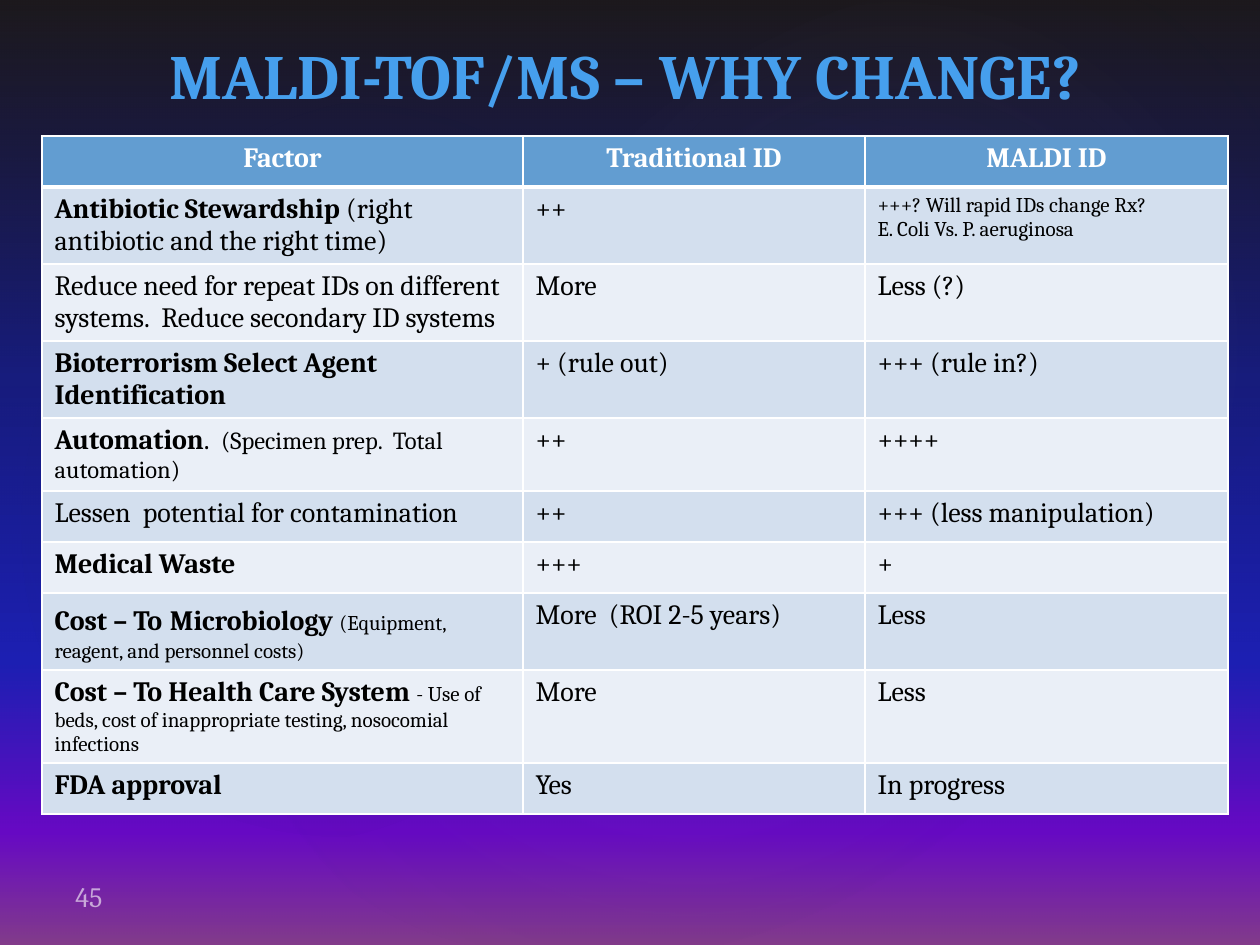
from lxml import etree
from pptx import Presentation
from pptx.dml.color import RGBColor
from pptx.enum.shapes import MSO_SHAPE as Shape
from pptx.enum.text import MSO_ANCHOR as Anchor, MSO_AUTO_SIZE as AutoSize, PP_ALIGN as Align
from pptx.oxml import parse_xml
from pptx.oxml.ns import nsdecls, qn
from pptx.util import Pt

PX = 914400 / 126
FONT = "Cambria"
WHITE = RGBColor(0xFF, 0xFF, 0xFF)
BLACK = RGBColor(0x00, 0x00, 0x00)
TITLE_BLUE = RGBColor(0x46, 0x9F, 0xED)
HEADER_BLUE = RGBColor(0x62, 0x9D, 0xD1)
BAND_DARK = RGBColor(0xD3, 0xDF, 0xEE)
BAND_LIGHT = RGBColor(0xEA, 0xEF, 0xF7)
NAVY = RGBColor(0x24, 0x28, 0x52)
HAZE = RGBColor(0xC4, 0xBC, 0xC6)
TAUPE = RGBColor(0x50, 0x46, 0x52)

# Stops are (position %, colour, opacity %)
SKY = [
    (0, BLACK, 100),
    (40, RGBColor(0x0A, 0x12, 0x8C), 100),
    (70, RGBColor(0x18, 0x1C, 0xC7), 100),
    (88, RGBColor(0x70, 0x05, 0xD4), 100),
    (100, RGBColor(0x8C, 0x3D, 0x91), 100),
]
VEIL = [(0, TAUPE, 36), (100, NAVY, 10)]
# Glows are (box, rotation, opacity % at the centre)
GLOWS = [
    ((189, 144, 998, 786), 328.7, 7),
    ((-38, 161, 764, 617), 294.3, 8),
    ((451, 16, 893, 655), 328.7, 8),
]

HEADINGS = ["Factor", "Traditional ID", "MALDI ID"]
COLUMN_WIDTHS = [481, 342, 363]
# A cell is plain text, or a list of (text, size, bold) runs; a line end starts a paragraph
ROWS = [
    ([("Antibiotic Stewardship ", 16, True), ("(right antibiotic and the right time)", 16, False)],
     "++",
     [("+++? Will rapid IDs change Rx?\nE. Coli Vs. P. aeruginosa", 12, False)]),
    ("Reduce need for repeat IDs on different systems.  Reduce secondary ID systems",
     "More", "Less (?)"),
    ([("Bioterrorism Select Agent Identification", 16, True)], "+ (rule out)", "+++ (rule in?)"),
    ([("Automation", 16, True), (".  ", 16, False),
      ("(Specimen prep.  Total automation)", 14, False)],
     "++", "++++"),
    ("Lessen  potential for contamination", "++", "+++ (less manipulation)"),
    ([("Medical Waste", 16, True)], "+++", "+"),
    ([("Cost – To", 16, True), (" ", 20, True), ("Microbiology ", 16, True),
      ("(Equipment, reagent, and personnel costs)", 12, False)],
     "More  (ROI 2-5 years)", "Less"),
    ([("Cost – To Health Care System ", 16, True),
      ("- Use of beds, cost of inappropriate testing, nosocomial infections", 12, False)],
     "More", "Less"),
    ([("FDA approval", 16, True)], "Yes", "In progress"),
]


def px(length):
    return round(length * PX)


def gradient(stops, radial=False):
    marks = "".join(
        f'<a:gs pos="{pos * 1000}"><a:srgbClr val="{color}">'
        f'<a:alpha val="{opacity * 1000}"/></a:srgbClr></a:gs>'
        for pos, color, opacity in stops)
    if radial:
        course = ('<a:path path="circle"><a:fillToRect l="50000" t="50000" '
                  'r="50000" b="50000"/></a:path>')
    else:
        course = '<a:lin ang="5400000" scaled="0"/>'
    return parse_xml(f'<a:gradFill {nsdecls("a")} rotWithShape="1">'
                     f'<a:gsLst>{marks}</a:gsLst>{course}</a:gradFill>')


def swap_fill(parent, new_fill):
    """Put a gradient where a solid fill has been set."""
    parent.replace(parent.find(qn("a:solidFill")), new_fill)


def write_runs(paragraph, runs, color):
    for text, size, bold in runs:
        run = paragraph.add_run()
        run.text = text
        font = run.font
        font.name, font.size, font.bold = FONT, Pt(size), bold
        font.color.rgb = color


def draw_gradient_shape(slide, kind, box, stops, rotation=0, radial=False):
    shape = slide.shapes.add_shape(kind, *map(px, box))
    shape.shadow.inherit = False
    shape.rotation = rotation
    shape.line.fill.background()
    shape.fill.solid()
    swap_fill(shape.fill._xPr, gradient(stops, radial))


def draw_backdrop(slide, box):
    background = slide.background.fill
    background.solid()
    swap_fill(background._xPr, gradient(SKY))
    draw_gradient_shape(slide, Shape.RECTANGLE, box, VEIL)
    left, top = box[:2]
    for (x, y, width, height), rotation, opacity in GLOWS:
        draw_gradient_shape(slide, Shape.OVAL, (left + x, top + y, width, height),
                            [(0, HAZE, opacity), (58, NAVY, 0)], rotation, radial=True)


def set_borders(cell, widths):
    """Draw white cell edges; widths are points for left, right, top and bottom."""
    properties = cell._tc.get_or_add_tcPr()
    for place, (side, width) in enumerate(zip("LRTB", widths)):
        edge = parse_xml(f'<a:ln{side} {nsdecls("a")} w="{Pt(width)}"><a:solidFill>'
                         f'<a:srgbClr val="{WHITE}"/></a:solidFill></a:ln{side}>')
        properties.insert(place, edge)


def fill_cell(cell, content, color):
    runs = [(content, 16, False)] if isinstance(content, str) else content
    paragraph = cell.text_frame.paragraphs[0]
    for text, size, bold in runs:
        for number, line in enumerate(text.split("\n")):
            if number:
                paragraph = cell.text_frame.add_paragraph()
            write_runs(paragraph, [(line, size, bold)], color)


def draw_comparison(slide, box):
    frame = slide.shapes.add_table(len(ROWS) + 1, len(HEADINGS), *map(px, box))
    table = frame.table
    for column, width in zip(table.columns, COLUMN_WIDTHS):
        column.width = px(width)
    for row in table.rows:
        row.height = px(51)

    for cell, heading in zip(table.rows[0].cells, HEADINGS):
        fill_cell(cell, [(heading, 16, True)], WHITE)
        cell.text_frame.paragraphs[0].alignment = Align.CENTER
        cell.fill.solid()
        cell.fill.fore_color.rgb = HEADER_BLUE
        set_borders(cell, (1, 1, 1, 3))

    for number, contents in enumerate(ROWS, start=1):
        for cell, content in zip(table.rows[number].cells, contents):
            fill_cell(cell, content, BLACK)
            cell.fill.solid()
            cell.fill.fore_color.rgb = BAND_DARK if number % 2 else BAND_LIGHT
            set_borders(cell, (1, 1, 3 if number == 1 else 1, 1))


def draw_title(slide, box):
    frame = slide.shapes.add_textbox(*map(px, box)).text_frame
    frame.word_wrap = False
    frame.auto_size = AutoSize.SHAPE_TO_FIT_TEXT
    paragraph = frame.paragraphs[0]
    paragraph.alignment = Align.LEFT
    write_runs(paragraph, [("MALDI-TOF/MS – WHY CHANGE?", 36, True)], TITLE_BLUE)


def draw_page_number(slide, box):
    frame = slide.shapes.add_textbox(*map(px, box)).text_frame
    frame.word_wrap = True
    frame.vertical_anchor = Anchor.BOTTOM
    frame.margin_bottom = px(1)
    paragraph = frame.paragraphs[0]
    write_runs(paragraph, [("45", 16, False)], WHITE)
    tint = paragraph.runs[0]._r.find(".//" + qn("a:srgbClr"))
    etree.SubElement(tint, qn("a:alpha")).set("val", "60000")


def main():
    deck = Presentation()
    deck.slide_width, deck.slide_height = px(1260), px(945)
    slide = deck.slides.add_slide(deck.slide_layouts[6])
    draw_backdrop(slide, (0, 0, 1260, 945))
    draw_comparison(slide, (42, 136, sum(COLUMN_WIDTHS), 730))
    draw_title(slide, (157, 30, 1089, 89))
    draw_page_number(slide, (63, 872, 294, 42))
    deck.save("out.pptx")


if __name__ == "__main__":
    main()
